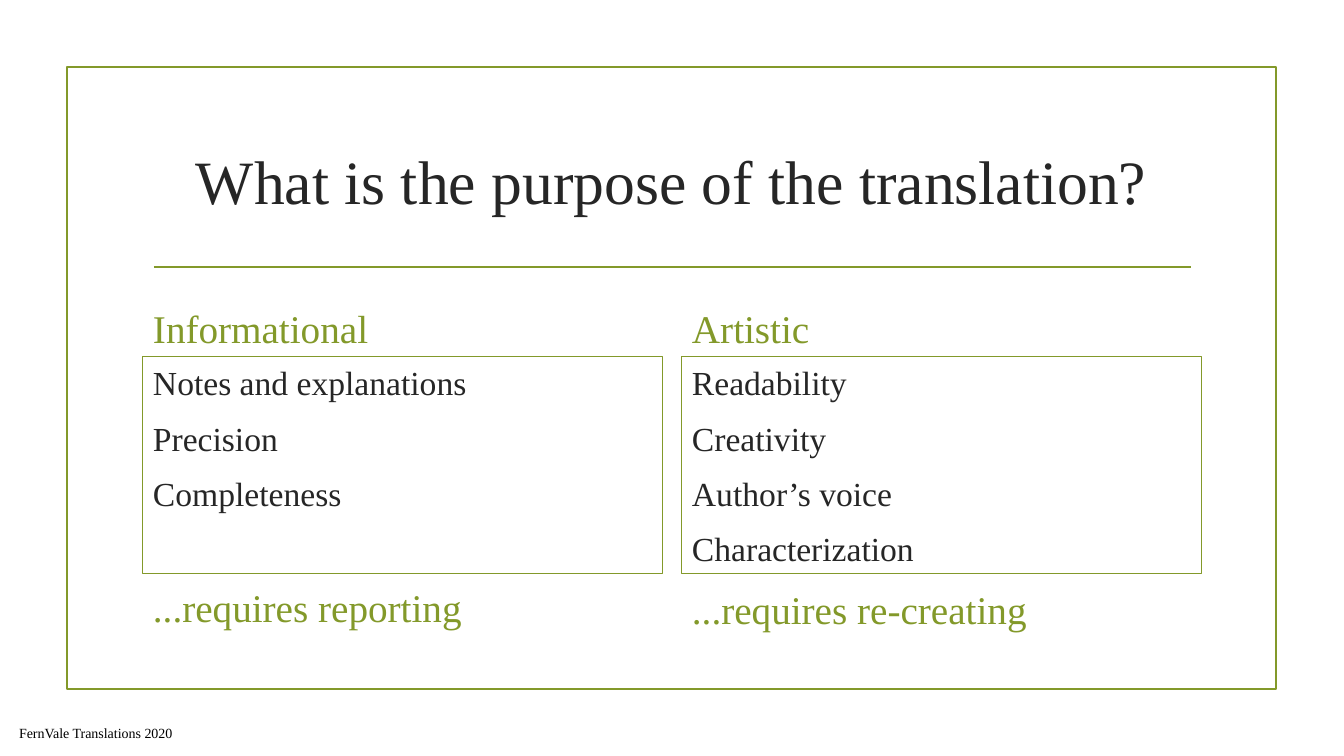
"""Build a slide comparing informational and artistic translation."""
import pptx
import pptx.util
import pptx.dml.color
import pptx.enum.shapes
import pptx.enum.text
import lxml.etree
from dataclasses import dataclass

TITLE = "What is the purpose of the translation?"
FOOTER = "FernVale Translations 2020"
COLUMNS = [
    {"heading": "Informational",
     "points": ["Notes and explanations", "Precision", "Completeness"],
     "closing": "...requires reporting", "closing_top": 571},
    {"heading": "Artistic",
     "points": ["Readability", "Creativity", "Author’s voice", "Characterization"],
     "closing": "...requires re-creating", "closing_top": 573},
]

SLIDE_WIDTH, SLIDE_HEIGHT = 1344, 756
EMU_PER_PX = 914400 / 100.8
COLUMN_LEFT, COLUMN_WIDTH, COLUMN_GAP = 143, 520, 19
HEADING_TOP, HEADING_HEIGHT = 292, 64
POINTS_TOP, POINTS_HEIGHT = 357, 217
INSET_X, INSET_Y = 10, 5

ANCHOR = pptx.enum.text.MSO_ANCHOR
ALIGN = pptx.enum.text.PP_ALIGN


@dataclass(frozen=True)
class Theme:
    font: str = "Times New Roman"
    green: str = "83992A"
    ink: str = "262626"
    black: str = "000000"
    title: int = 44
    heading: int = 28
    body: int = 24
    footer: int = 10
    rule: float = 1.25
    border: float = 0.75
    space_before: float = 4.8
    space_after: int = 6


THEME = Theme()


def px(length):
    return pptx.util.Emu(round(length * EMU_PER_PX))


def color(code):
    return pptx.dml.color.RGBColor.from_string(code)


def style_line(line, width):
    line.color.rgb = color(THEME.green)
    line.width = pptx.util.Pt(width)


def add_frame(page, left, top, width, height):
    frame = page.shapes.add_shape(
        pptx.enum.shapes.MSO_SHAPE.RECTANGLE, px(left), px(top), px(width), px(height))
    frame.shadow.inherit = False
    frame.fill.background()
    style_line(frame.line, THEME.rule)


def add_rule(page, left, right, y):
    rule = page.shapes.add_connector(
        pptx.enum.shapes.MSO_CONNECTOR.STRAIGHT, px(left), px(y), px(right), px(y))
    style_line(rule.line, THEME.rule)
    lxml.etree.SubElement(rule._element.spPr, pptx.oxml.ns.qn("a:effectLst"))


def add_text(page, lines, area, size, ink, anchor, align=ALIGN.LEFT):
    box = page.shapes.add_textbox(*map(px, area))
    frame = box.text_frame
    frame.word_wrap = True
    frame.vertical_anchor = anchor
    frame.margin_left = frame.margin_right = px(INSET_X)
    frame.margin_top = frame.margin_bottom = px(INSET_Y)
    for index, line in enumerate(lines):
        para = frame.add_paragraph() if index else frame.paragraphs[0]
        para.text = line
        para.alignment = align
        if index:
            para.space_before = pptx.util.Pt(THEME.space_before)
        para.space_after = pptx.util.Pt(THEME.space_after)
        para.font.name = THEME.font
        para.font.size = pptx.util.Pt(size)
        para.font.color.rgb = color(ink)
    return box


def add_column(page, column, left):
    for text, top in ((column["heading"], HEADING_TOP),
                      (column["closing"], column["closing_top"])):
        add_text(page, [text], (left, top, COLUMN_WIDTH, HEADING_HEIGHT),
                 THEME.heading, THEME.green, ANCHOR.BOTTOM)
    points = add_text(page, column["points"],
                      (left, POINTS_TOP, COLUMN_WIDTH, POINTS_HEIGHT),
                      THEME.body, THEME.ink, ANCHOR.TOP)
    style_line(points.line, THEME.border)


def main():
    deck = pptx.Presentation()
    deck.slide_width, deck.slide_height = px(SLIDE_WIDTH), px(SLIDE_HEIGHT)
    page = deck.slides.add_slide(deck.slide_layouts[6])
    add_frame(page, 67, 67, 1209, 622)
    add_rule(page, 154, 1191, 267)
    add_text(page, [TITLE], (143, 108, 1058, 144),
             THEME.title, THEME.ink, ANCHOR.MIDDLE, ALIGN.CENTER)
    for index, column in enumerate(COLUMNS):
        add_column(page, column, COLUMN_LEFT + index * (COLUMN_WIDTH + COLUMN_GAP))
    add_text(page, [FOOTER], (9, 717, 805, 31),
             THEME.footer, THEME.black, ANCHOR.MIDDLE)
    deck.save("out.pptx")


if __name__ == "__main__":
    main()
